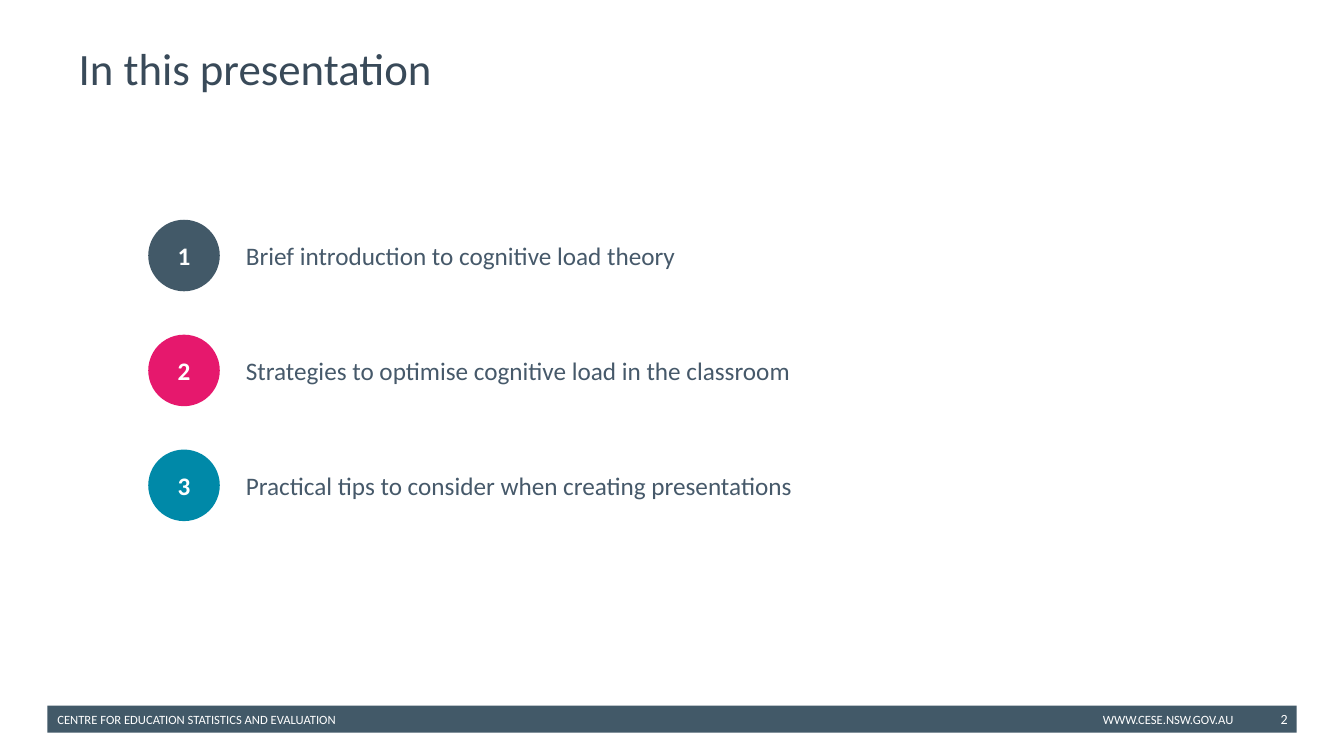
from pptx import Presentation
from pptx.dml.color import RGBColor
from pptx.enum import shapes, text
from pptx.util import Inches, Pt

COLOURS = {
    "slate": "425968",
    "pink": "E6186D",
    "teal": "0089A8",
    "title": "394A59",
    "body": "46596A",
    "white": "FFFFFF",
}
FONT = "Calibri"
TITLE = "In this presentation"
AGENDA = [
    ("slate", "Brief introduction to cognitive load theory"),
    ("pink", "Strategies to optimise cognitive load in the classroom"),
    ("teal", "Practical tips to consider when creating presentations"),
]
# text, left, top, width, height, size, alignment
FOOTER = [
    ("CENTRE FOR EDUCATION STATISTICS AND EVALUATION",
     0.47, 7.01, 4.62, 0.25, 9, text.PP_ALIGN.LEFT),
    ("WWW.CESE.NSW.GOV.AU", 10.84, 7.01, 2.27, 0.25, 9, text.PP_ALIGN.LEFT),
    ("2", 12.32, 6.93, 0.55, 0.4, 10, text.PP_ALIGN.RIGHT),
]
FIRST_TOP, ROW_STEP, CIRCLE_SIZE = 2.18, 1.14, 0.71
CIRCLE_LEFT, TOPIC_LEFT = 1.47, 2.34
TOPIC_WIDTH, TOPIC_HEIGHT = 7.32, 0.4


def rgb(name):
    return RGBColor.from_string(COLOURS[name])


def write(box, words, size, colour, align=text.PP_ALIGN.LEFT, bold=False):
    frame = box.text_frame
    frame.word_wrap = True
    frame.auto_size = text.MSO_AUTO_SIZE.NONE
    frame.vertical_anchor = text.MSO_ANCHOR.MIDDLE
    para = frame.paragraphs[0]
    para.alignment = align
    span = para.add_run()
    span.text = words
    span.font.name = FONT
    span.font.size = Pt(size)
    span.font.bold = bold
    span.font.color.rgb = rgb(colour)


def add_filled(page, kind, colour, *place):
    shape = page.shapes.add_shape(kind, *map(Inches, place))
    shape.shadow.inherit = False
    shape.fill.solid()
    shape.fill.fore_color.rgb = rgb(colour)
    shape.line.fill.background()
    return shape


def add_footer(page):
    add_filled(page, shapes.MSO_SHAPE.RECTANGLE, "slate", 0.47, 7, 12.39, 0.27)
    for words, left, top, width, height, size, align in FOOTER:
        box = page.shapes.add_textbox(*map(Inches, (left, top, width, height)))
        write(box, words, size, "white", align)


def add_title(page):
    title = page.shapes.title
    title.left, title.top = Inches(0.68), Inches(0.36)
    title.width, title.height = Inches(12), Inches(0.63)
    write(title, TITLE, 32, "title")


def add_agenda(page):
    for index, (colour, topic) in enumerate(AGENDA):
        top = FIRST_TOP + index * ROW_STEP
        circle = add_filled(page, shapes.MSO_SHAPE.OVAL, colour,
                            CIRCLE_LEFT, top, CIRCLE_SIZE, CIRCLE_SIZE)
        write(circle, str(index + 1), 18, "white", text.PP_ALIGN.CENTER, True)
        topic_top = top + (CIRCLE_SIZE - TOPIC_HEIGHT) / 2
        box = page.shapes.add_textbox(Inches(TOPIC_LEFT), Inches(topic_top),
                                      Inches(TOPIC_WIDTH), Inches(TOPIC_HEIGHT))
        write(box, topic, 18, "body")


def main():
    deck = Presentation()
    deck.slide_width, deck.slide_height = Inches(13.33), Inches(7.5)
    page = deck.slides.add_slide(deck.slide_layouts[5])
    add_footer(page)
    add_title(page)
    add_agenda(page)
    deck.save("out.pptx")


if __name__ == "__main__":
    main()
